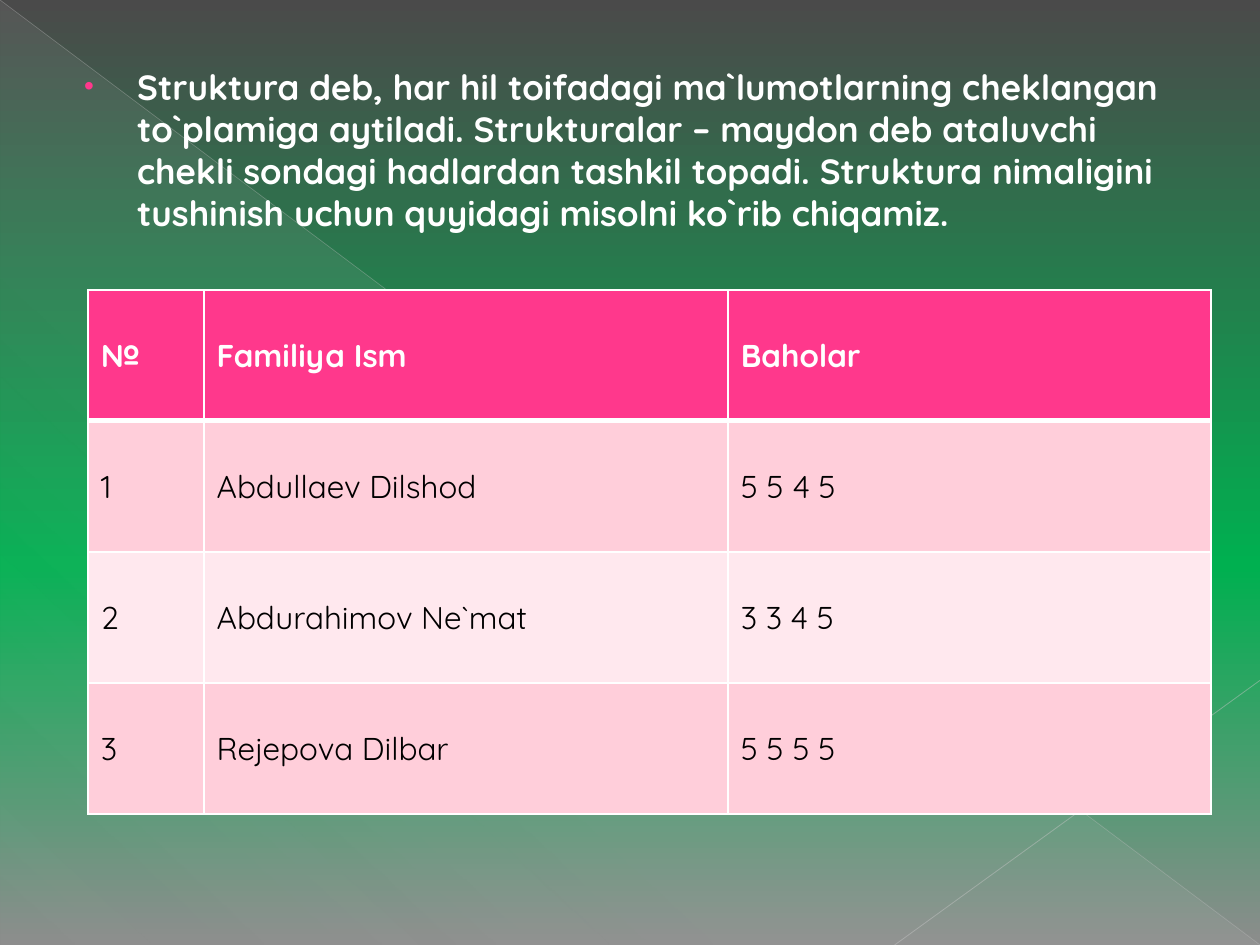
from dataclasses import dataclass
from typing import Any

from lxml.etree import SubElement
from pptx import Presentation
from pptx.dml.color import RGBColor
from pptx.enum.shapes import MSO_CONNECTOR, MSO_SHAPE
from pptx.enum.text import MSO_ANCHOR
from pptx.oxml.ns import qn
from pptx.util import Inches, Pt

WIDTH, HEIGHT = 10, 7.5
FONT = "Quicksand"
WHITE, BLACK, PINK = "FFFFFF", "000000", "FF388C"
BAND_FILLS = ("FFCEDA", "FFE8EE")
COLUMN_WIDTHS = (0.92, 4.16, 3.83)
ROW_HEIGHT = 1.04
INTRODUCTION = (
    "Struktura deb, har hil toifadagi ma`lumotlarning cheklangan to`plamiga aytiladi. "
    "Strukturalar – maydon deb ataluvchi chekli sondagi hadlardan tashkil topadi. "
    "Struktura nimaligini tushinish uchun quyidagi misolni ko`rib chiqamiz."
)
GRADES = (
    ("№", "Familiya Ism", "Baholar"),
    ("1", "Abdullaev Dilshod", "5 5 4 5"),
    ("2", "Abdurahimov Ne`mat", "3 3 4 5"),
    ("3", "Rejepova Dilbar", "5 5 5 5"),
)


@dataclass(frozen=True)
class Stop:
    """A gradient stop with position and opacity in percent."""
    position: int
    color: str
    opacity: int = 100


@dataclass(frozen=True)
class Ray:
    """A thin decorative line with ends as shares of the slide's size."""
    start: tuple[float, float]
    end: tuple[float, float]
    color: str
    width: float
    opacity: int


BACKGROUND = (Stop(0, "4A4A4A"), Stop(60, "00B050"), Stop(100, "8C8C8C"))
SHEEN = (Stop(0, "D2D2D2", 10), Stop(70, "D2D2D2", 8), Stop(100, "D2D2D2", 1))
RAYS = (
    Ray((0, 0), (1, 1), "BFBFBF", 0.39, 35),
    Ray((1, 0.72), (0.71, 1), "C6C6C6", 0.47, 45),
)


def rgb(color: str) -> RGBColor:
    """Turn a hex string into a colour."""
    return RGBColor.from_string(color)


def set_attributes(target: Any, values: dict[str, Any]) -> None:
    """Apply a dict of format values to an object."""
    for name, value in values.items():
        setattr(target, name, value)


def add_color(parent: Any, color: str, opacity: int = 100) -> None:
    """Append a colour element with its opacity."""
    element = SubElement(parent, qn("a:srgbClr"), val=color)
    if opacity < 100:
        SubElement(element, qn("a:alpha"), val=str(opacity * 1000))


def fill_gradient(fill: Any, owner: Any, stops: tuple[Stop, ...], angle: int) -> None:
    """Fill with a linear gradient at a clockwise angle."""
    fill.gradient()
    fill.gradient_angle = 360 - angle
    stop_list = owner.find(".//" + qn("a:gsLst"))
    for old_stop in list(stop_list):
        stop_list.remove(old_stop)
    for stop in stops:
        element = SubElement(stop_list, qn("a:gs"), pos=str(stop.position * 1000))
        add_color(element, stop.color, stop.opacity)


def draw_sheen(slide: Any) -> None:
    """Draw the faint triangle across the slide."""
    shape = slide.shapes.add_shape(
        MSO_SHAPE.RIGHT_TRIANGLE, 0, 0, Inches(WIDTH), Inches(HEIGHT))
    shape.shadow.inherit = False
    shape.line.fill.background()
    fill_gradient(shape.fill, shape.element, SHEEN, 133)


def draw_ray(slide: Any, ray: Ray) -> None:
    """Draw one translucent line."""
    ends = [Inches(share * size) for point in (ray.start, ray.end)
            for share, size in zip(point, (WIDTH, HEIGHT))]
    connector = slide.shapes.add_connector(MSO_CONNECTOR.STRAIGHT, *ends)
    connector.line.width = Pt(ray.width)
    connector.line.fill.solid()
    line_fill = connector.element.spPr.find(".//" + qn("a:solidFill"))
    connector.line.color.rgb = rgb(ray.color)
    SubElement(line_fill[0], qn("a:alpha"), val=str(ray.opacity * 1000))
    SubElement(connector.element.spPr, qn("a:effectLst"))


def write_text(paragraph: Any, text: str, size: int, color: str, bold: bool) -> None:
    """Add one formatted run to a paragraph."""
    run = paragraph.add_run()
    run.text = text
    set_attributes(run.font, {"name": FONT, "size": Pt(size), "bold": bold})
    run.font.color.rgb = rgb(color)


def draw_introduction(slide: Any) -> None:
    """Draw the bulleted definition."""
    box = slide.shapes.add_textbox(Inches(0.5), Inches(0.47), Inches(9), Inches(1.6))
    box.text_frame.word_wrap = True
    paragraph = box.text_frame.paragraphs[0]
    write_text(paragraph, INTRODUCTION, 20, WHITE, True)
    properties = paragraph._p.get_or_add_pPr()
    properties.set("marL", str(Inches(0.49)))
    properties.set("indent", str(Inches(-0.42)))
    add_color(SubElement(properties, qn("a:buClr")), PINK)
    SubElement(properties, qn("a:buSzPct"), val="80000")
    SubElement(properties, qn("a:buFont"), typeface="Arial")
    SubElement(properties, qn("a:buChar"), char="•")


def set_borders(cell: Any, row: int) -> None:
    """Give a cell white borders, thicker under the header."""
    widths = {"L": 1, "R": 1, "T": 3 if row == 1 else 1, "B": 3 if row == 0 else 1}
    properties = cell._tc.get_or_add_tcPr()
    for index, (side, width) in enumerate(widths.items()):
        line = SubElement(properties, qn(f"a:ln{side}"), w=str(Pt(width)))
        add_color(SubElement(line, qn("a:solidFill")), WHITE)
        properties.insert(index, line)


def draw_grades(slide: Any) -> None:
    """Draw the table of students and marks."""
    frame = slide.shapes.add_table(
        len(GRADES), len(COLUMN_WIDTHS), Inches(0.7), Inches(2.3),
        Inches(sum(COLUMN_WIDTHS)), Inches(ROW_HEIGHT * len(GRADES)))
    table = frame.table
    for column, width in zip(table.columns, COLUMN_WIDTHS):
        column.width = Inches(width)
    for row, texts in enumerate(GRADES):
        table.rows[row].height = Inches(ROW_HEIGHT)
        header = row == 0
        for column, text in enumerate(texts):
            cell = table.cell(row, column)
            cell.vertical_anchor = MSO_ANCHOR.MIDDLE
            cell.fill.solid()
            cell.fill.fore_color.rgb = rgb(PINK if header else BAND_FILLS[(row - 1) % 2])
            set_borders(cell, row)
            write_text(cell.text_frame.paragraphs[0], text, 18,
                       WHITE if header else BLACK, header)


def main() -> None:
    """Build and save the slide."""
    presentation = Presentation()
    set_attributes(presentation, {"slide_width": Inches(WIDTH), "slide_height": Inches(HEIGHT)})
    slide = presentation.slides.add_slide(presentation.slide_layouts[6])
    fill_gradient(slide.background.fill, slide.element, BACKGROUND, 90)
    draw_sheen(slide)
    for ray in RAYS:
        draw_ray(slide, ray)
    draw_introduction(slide)
    draw_grades(slide)
    presentation.save("out.pptx")


if __name__ == "__main__":
    main()
